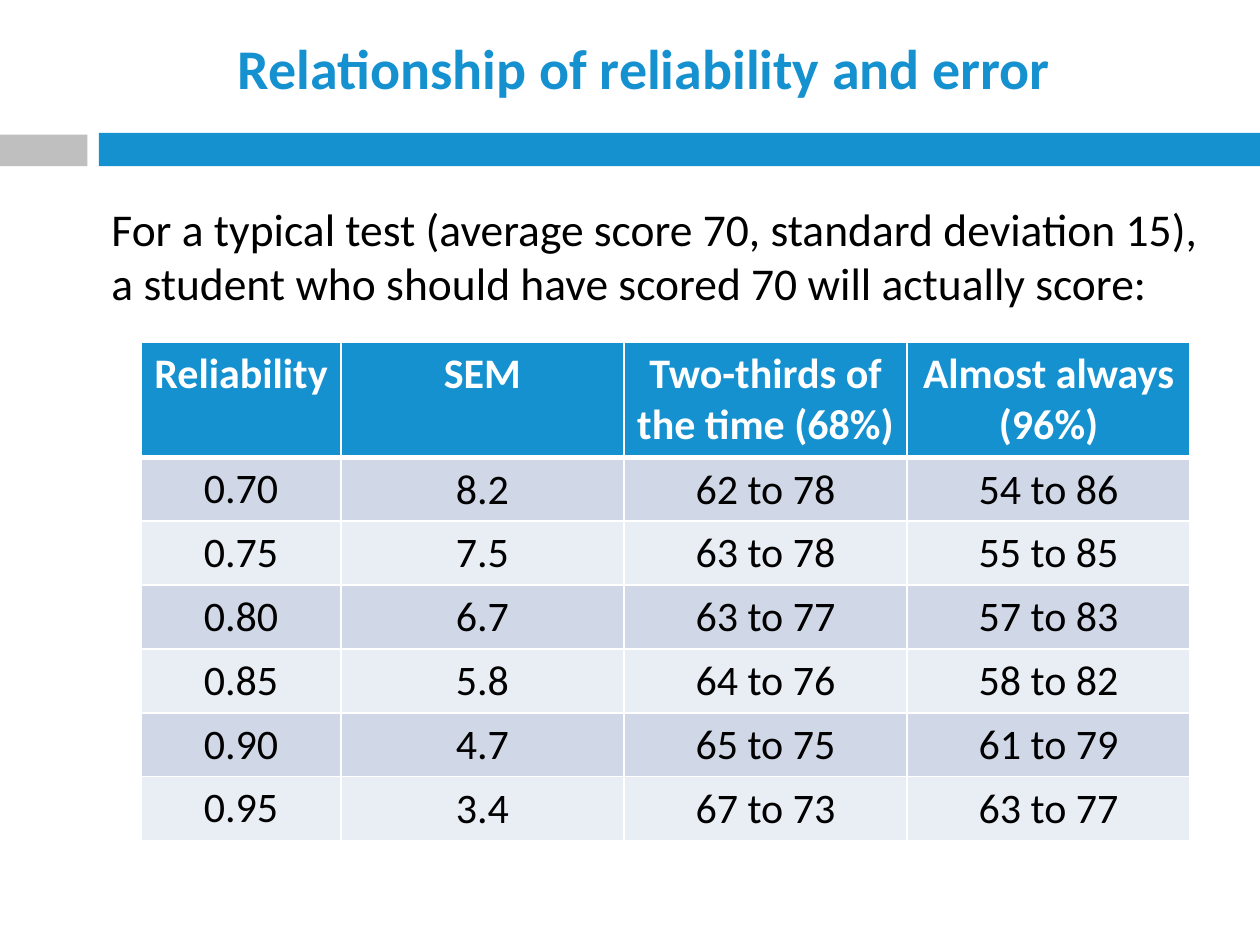
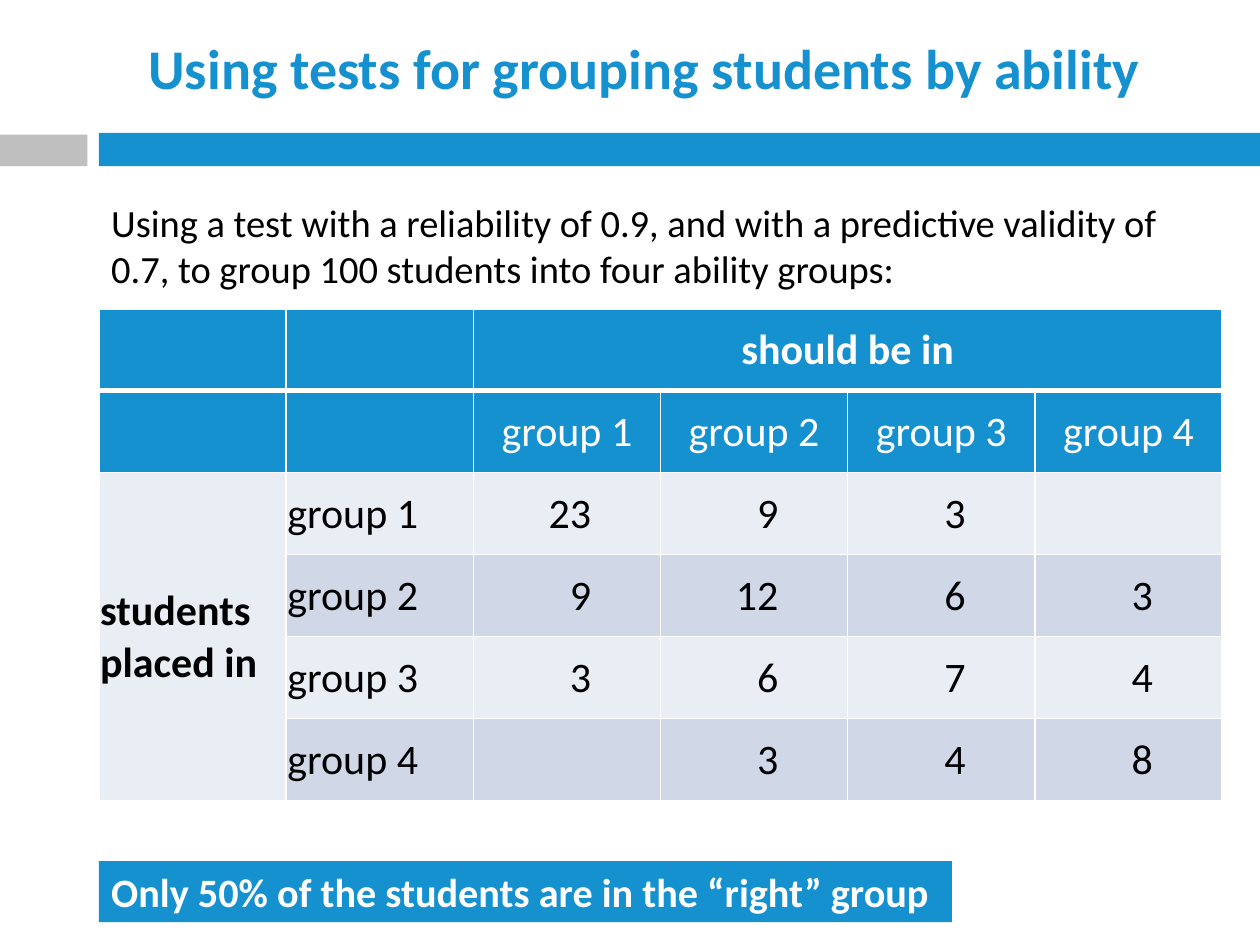
"""Builds two slides on test reliability and ability grouping."""
from dataclasses import dataclass

from lxml.etree import SubElement
from pptx import Presentation
from pptx.dml.color import RGBColor
from pptx.enum.shapes import MSO_SHAPE
from pptx.enum.text import MSO_ANCHOR, MSO_AUTO_SIZE, PP_ALIGN
from pptx.oxml import parse_xml
from pptx.oxml.ns import nsdecls, qn
from pptx.util import Pt


@dataclass(frozen=True)
class Theme:
    font: str = "Calibri"
    blue: str = "1691D0"
    grey: str = "BFBFBF"
    white: str = "FFFFFF"
    black: str = "000000"
    dark_band: str = "D0D8E8"
    light_band: str = "E9EDF4"
    title_size: float = 32
    body_size: float = 26
    intro_size: float = 22
    banner_size: float = 23
    table_size: float = 24
    rule: float = 1
    header_rule: float = 3
    left: float = 56.5


@dataclass(frozen=True)
class CellLook:
    fill: str
    colour: str = Theme.black
    bold: bool = False
    align: PP_ALIGN = PP_ALIGN.CENTER
    anchor: MSO_ANCHOR = MSO_ANCHOR.MIDDLE
    margins: tuple = (0.72, 0.72, 0.72, 0)


class Deck:
    def __init__(self, theme):
        self.theme = theme
        self.presentation = Presentation()
        self.presentation.slide_width = Pt(720)
        self.presentation.slide_height = Pt(540)
        self.slide = None

    def start_slide(self, title, layout_index):
        theme = self.theme
        layout = self.presentation.slide_layouts[layout_index]
        self.slide = self.presentation.slides.add_slide(layout)
        self.bar(theme.left, 76, 720 - theme.left, 19, theme.blue)
        self.bar(0, 77, 50, 18, theme.grey)
        heading = self.slide.shapes.title
        self.place(heading, theme.left, 0, 623.5, 77)
        heading.text_frame.vertical_anchor = MSO_ANCHOR.MIDDLE
        self.set_text(heading.text_frame, title, theme.title_size, theme.blue, True,
                      PP_ALIGN.CENTER)

    def place(self, shape, left, top, width, height):
        shape.left, shape.top, shape.width, shape.height = map(Pt, (left, top, width, height))

    def set_text(self, frame, text, size, colour, bold=False, align=PP_ALIGN.LEFT):
        frame.text = text
        frame.word_wrap = True
        for paragraph in frame.paragraphs:
            paragraph.alignment = align
            for run in paragraph.runs:
                run.font.name = self.theme.font
                run.font.size = Pt(size)
                run.font.bold = bold
                run.font.color.rgb = RGBColor.from_string(colour)

    def bar(self, left, top, width, height, colour):
        shape = self.slide.shapes.add_shape(
            MSO_SHAPE.RECTANGLE, Pt(left), Pt(top), Pt(width), Pt(height))
        shape.shadow.inherit = False
        shape.fill.solid()
        shape.fill.fore_color.rgb = RGBColor.from_string(colour)
        shape.line.fill.background()
        return shape

    def banner(self, text, left, top, width, height):
        frame = self.bar(left, top, width, height, self.theme.blue).text_frame
        frame.vertical_anchor = MSO_ANCHOR.TOP
        self.set_text(frame, text, self.theme.banner_size, self.theme.white, True)

    def body(self, text, left, top, width, height):
        content = self.slide.placeholders[1]
        self.place(content, left, top, width, height)
        frame = content.text_frame
        frame.auto_size = MSO_AUTO_SIZE.NONE
        self.set_text(frame, text, self.theme.body_size, self.theme.black)
        paragraph = frame.paragraphs[0]
        paragraph.space_before = Pt(0)
        properties = paragraph._p.get_or_add_pPr()
        properties.set("marL", "0")
        properties.set("indent", "0")
        SubElement(properties, qn("a:buNone"))

    def intro(self, text, left, top, width, height):
        box = self.slide.shapes.add_textbox(Pt(left), Pt(top), Pt(width), Pt(height))
        self.set_text(box.text_frame, text, self.theme.intro_size, self.theme.black)

    def table(self, left, top, widths, heights, rows, look):
        frame = self.slide.shapes.add_table(
            len(rows), len(widths), Pt(left), Pt(top), Pt(sum(widths)), Pt(sum(heights)))
        grid = frame.table
        for column, width in zip(grid.columns, widths):
            column.width = Pt(width)
        for row, height in zip(grid.rows, heights):
            row.height = Pt(height)
        for row, texts in enumerate(rows):
            for column, text in enumerate(texts):
                self.cell(grid.cell(row, column), text, look(row, column), row)
        return grid

    def cell(self, cell, text, look, row):
        cell.fill.solid()
        cell.fill.fore_color.rgb = RGBColor.from_string(look.fill)
        cell.vertical_anchor = look.anchor
        cell.margin_left, cell.margin_top, cell.margin_right, cell.margin_bottom = map(
            Pt, look.margins)
        if text:
            self.set_text(cell.text_frame, text, self.theme.table_size,
                          look.colour, look.bold, look.align)
        for position, side in enumerate("LRTB"):
            under_header = (row, side) in ((0, "B"), (1, "T"))
            weight = self.theme.header_rule if under_header else self.theme.rule
            border = parse_xml(
                f'<a:ln{side} {nsdecls("a")} w="{Pt(weight)}"><a:solidFill>'
                f'<a:srgbClr val="{self.theme.white}"/></a:solidFill></a:ln{side}>')
            cell._tc.get_or_add_tcPr().insert(position, border)

    def band(self, row):
        return self.theme.dark_band if row % 2 else self.theme.light_band


def reliability_slide(deck):
    theme = deck.theme
    wide_margins = (7.2, 3.6, 7.2, 3.6)
    scores = [
        ("Reliability", "SEM", "Two-thirds of the time (68%)", "Almost always (96%)"),
        ("0.70", "8.2", "62 to 78", "54 to 86"),
        ("0.75", "7.5", "63 to 78", "55 to 85"),
        ("0.80", "6.7", "63 to 77", "57 to 83"),
        ("0.85", "5.8", "64 to 76", "58 to 82"),
        ("0.90", "4.7", "65 to 75", "61 to 79"),
        ("0.95", "3.4", "67 to 73", "63 to 77"),
    ]

    def look(row, column):
        if row == 0:
            return CellLook(theme.blue, theme.white, True,
                            anchor=MSO_ANCHOR.TOP, margins=wide_margins)
        if column == 0:
            return CellLook(deck.band(row), margins=wide_margins)
        return CellLook(deck.band(row))

    deck.start_slide("Relationship of reliability and error", 1)
    deck.body("For a typical test (average score 70, standard deviation 15), "
              "a student who should have scored 70 will actually score:",
              theme.left, 111, 644.5, 381)
    deck.table(80.8, 195.5, [114] + [161.8] * 3, [65.8] + [36.4] * 6, scores, look)


def grouping_slide(deck):
    theme = deck.theme
    groups = [f"group {number}" for number in range(1, 5)]
    counts = [
        ("23", "9", "3", ""),
        ("9", "12", "6", "3"),
        ("3", "6", "7", "4"),
        ("", "3", "4", "8"),
    ]
    placements = [["", "", "should be in", "", "", ""], ["", "", *groups]]
    placements += [["", group, *count] for group, count in zip(groups, counts)]
    placements[2][0] = "students placed in"

    def look(row, column):
        if row < 2:
            return CellLook(theme.blue, theme.white, row == 0)
        if column == 0:
            return CellLook(theme.light_band, bold=True, align=PP_ALIGN.LEFT)
        if column == 1:
            return CellLook(deck.band(row), align=PP_ALIGN.LEFT)
        return CellLook(deck.band(row), align=PP_ALIGN.RIGHT, margins=(0.72, 0.72, 39.6, 0))

    deck.start_slide("Using tests for grouping students by ability", 5)
    grid = deck.table(theme.left, 176.5, [107] * 6, [46.8] * 6, placements, look)
    grid.cell(0, 2).merge(grid.cell(0, 5))
    grid.cell(2, 0).merge(grid.cell(5, 0))
    deck.intro("Using a test with a reliability of 0.9, and with a predictive validity of 0.7, "
               "to group 100 students into four ability groups:", theme.left, 110, 633.5, 60.5)
    deck.banner("Only 50% of the students are in the “right” group", theme.left, 492, 487.5, 35)


def main():
    deck = Deck(Theme())
    reliability_slide(deck)
    grouping_slide(deck)
    deck.presentation.save("out.pptx")


if __name__ == "__main__":
    main()
